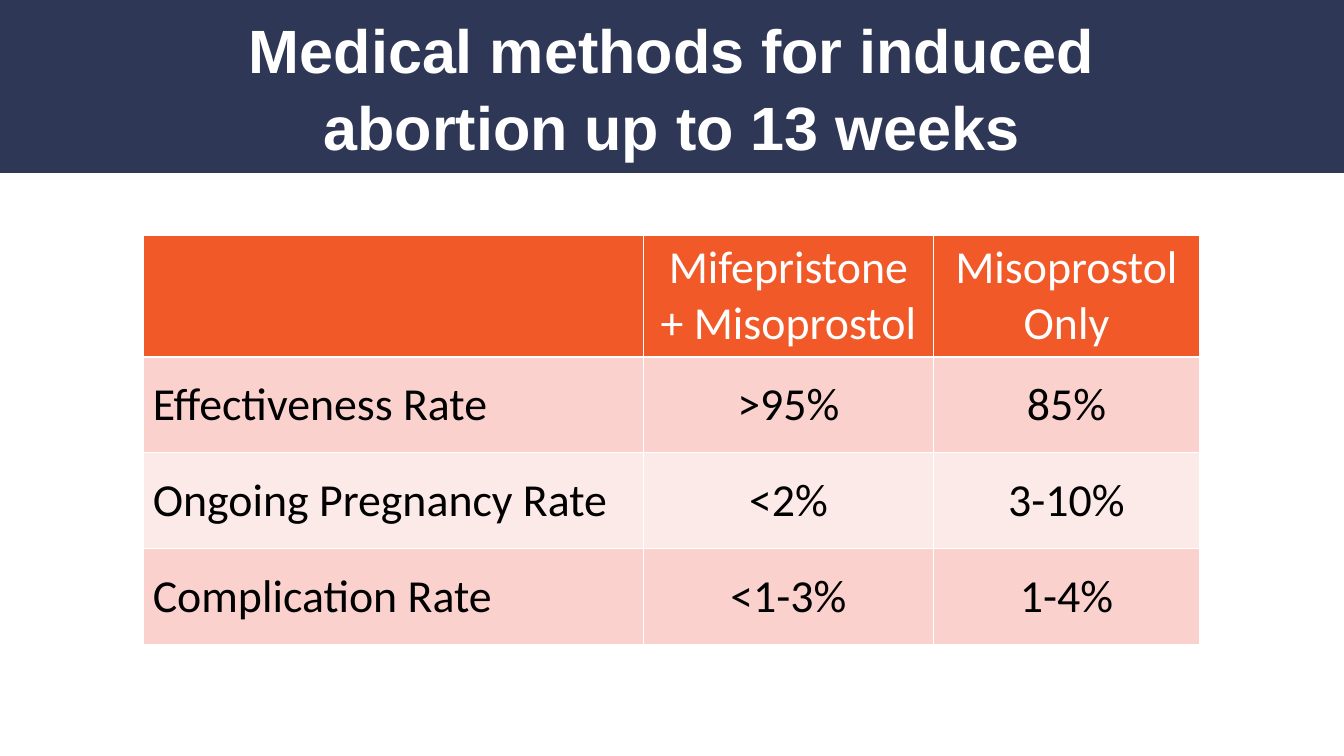
from pptx import Presentation
from pptx.dml.color import RGBColor
from pptx.enum.shapes import MSO_SHAPE
from pptx.enum.text import MSO_ANCHOR, PP_ALIGN
from pptx.oxml.ns import qn
from pptx.util import Inches, Pt
from lxml.etree import SubElement

NAVY, ORANGE, WHITE, BLACK = "2E3856", "F15928", "FFFFFF", "000000"
BANDS = ("FAD1CD", "FCEAE8")
HEADING = {"name": "Arial", "size": Pt(72), "bold": True}
TABLE_TEXT = {"name": "Calibri", "size": Pt(54), "bold": False}

RATES = [
    ["", "Mifepristone + Misoprostol", "Misoprostol Only"],
    ["Effectiveness Rate", ">95%", "85%"],
    ["Ongoing Pregnancy Rate", "<2%", "3-10%"],
    ["Complication Rate", "<1-3%", "1-4%"],
]


def paint(colour_format, colour):
    colour_format.rgb = RGBColor.from_string(colour)


def set_all(target, values):
    for name, value in values.items():
        setattr(target, name, value)


class SlideBuilder:
    def __init__(self, presentation):
        self.slide = presentation.slides.add_slide(presentation.slide_layouts[5])

    def add_text(self, frame, text, font, colour, align):
        paragraph = frame.paragraphs[0]
        paragraph.alignment = align
        run = paragraph.add_run()
        run.text = text
        set_all(run.font, font)
        paint(run.font.color, colour)
        return paragraph

    def title(self, text, left, top, width, height):
        heading = self.slide.shapes.title
        set_all(heading, {"left": Inches(left), "top": Inches(top),
                          "width": Inches(width), "height": Inches(height)})
        set_all(heading.text_frame, {
            "margin_left": 0, "margin_top": 0, "margin_right": 0, "margin_bottom": 0,
            "vertical_anchor": MSO_ANCHOR.MIDDLE, "word_wrap": True})
        paragraph = self.add_text(heading.text_frame, text, HEADING, WHITE, PP_ALIGN.CENTER)
        paragraph.line_spacing = 1.04

    def banner(self, width, height, colour):
        banner = self.slide.shapes.add_shape(
            MSO_SHAPE.RECTANGLE, 0, 0, Inches(width), Inches(height))
        banner.shadow.inherit = False
        banner.fill.solid()
        paint(banner.fill.fore_color, colour)
        banner.line.fill.background()
        # Keep the banner behind the title
        self.slide.shapes.title.element.addprevious(banner.element)

    def borders(self, cell, bottom):
        properties = cell._tc.get_or_add_tcPr()
        for side, points in (("L", 1), ("R", 1), ("T", 1), ("B", bottom)):
            line = SubElement(properties, qn(f"a:ln{side}"), w=str(Pt(points)))
            fill = SubElement(line, qn("a:solidFill"))
            SubElement(fill, qn("a:srgbClr"), val=WHITE)

    def table(self, rows, left, top, widths, heights):
        table = self.slide.shapes.add_table(
            len(rows), len(widths), Inches(left), Inches(top),
            Inches(sum(widths)), Inches(sum(heights))).table
        for column, width in zip(table.columns, widths):
            column.width = Inches(width)
        for row, height in zip(table.rows, heights):
            row.height = Inches(height)
        for r, texts in enumerate(rows):
            header = r == 0
            for c, text in enumerate(texts):
                cell = table.cell(r, c)
                self.borders(cell, 3 if header else 1)
                cell.fill.solid()
                paint(cell.fill.fore_color, ORANGE if header else BANDS[(r - 1) % 2])
                set_all(cell, {
                    "margin_left": Inches(0.15), "margin_right": Inches(0.15),
                    "margin_top": Inches(0.08), "margin_bottom": Inches(0.08),
                    "vertical_anchor": MSO_ANCHOR.TOP if header else MSO_ANCHOR.MIDDLE})
                if text:
                    self.add_text(cell.text_frame, text, TABLE_TEXT,
                                  WHITE if header else BLACK,
                                  PP_ALIGN.CENTER if c else PP_ALIGN.LEFT)


def main():
    presentation = Presentation()
    presentation.slide_width = Inches(21.99)
    presentation.slide_height = Inches(12.37)
    builder = SlideBuilder(presentation)

    # Title on its banner
    builder.title("Medical methods for induced abortion up to 13 weeks", 2.99, 0.2, 16, 2.42)
    builder.banner(21.99, 2.83, NAVY)

    # Comparison of the two methods
    builder.table(RATES, 2.35, 3.85, [8.18, 4.74, 4.36], [1.95] + [1.57] * 3)

    presentation.save("out.pptx")


if __name__ == "__main__":
    main()
